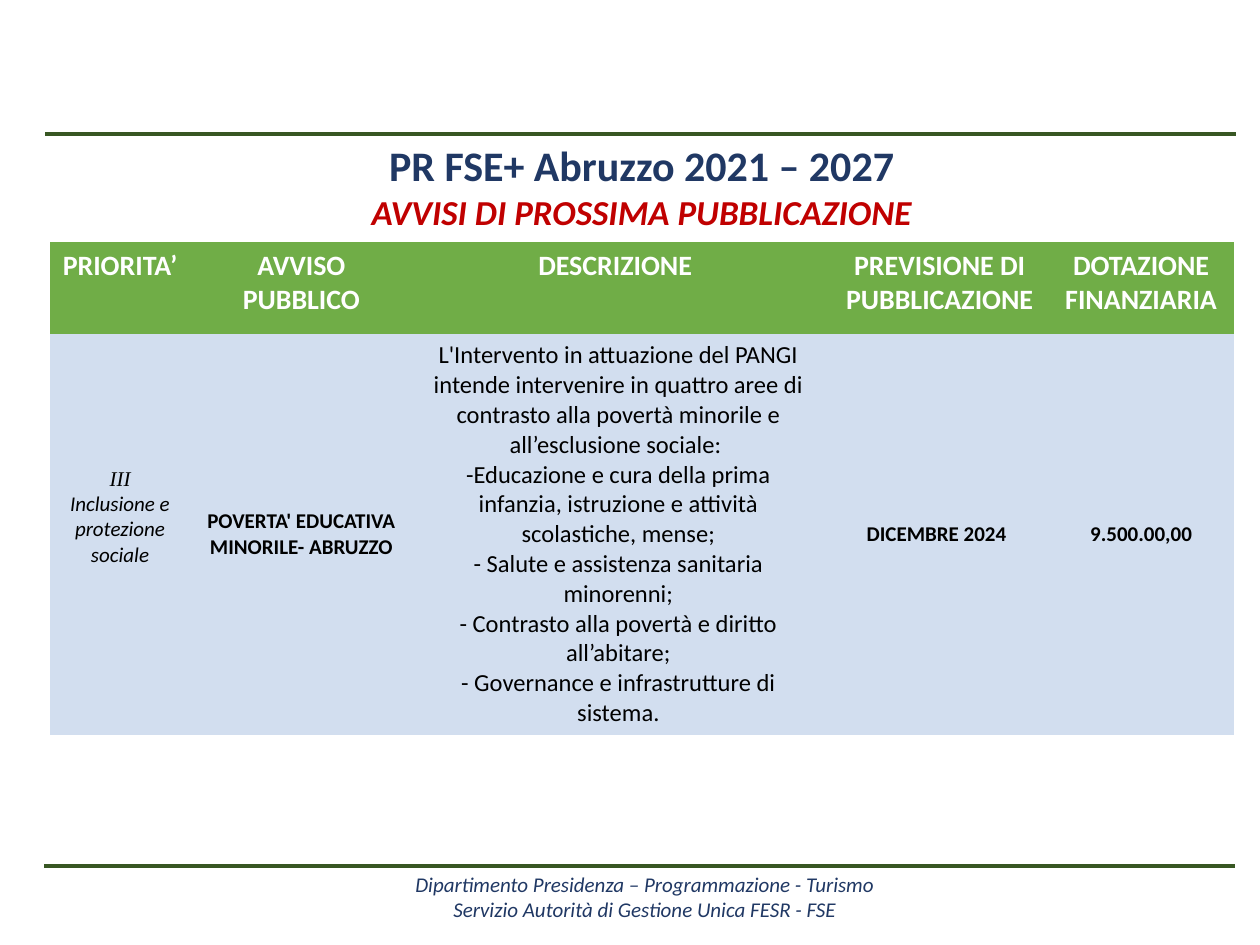
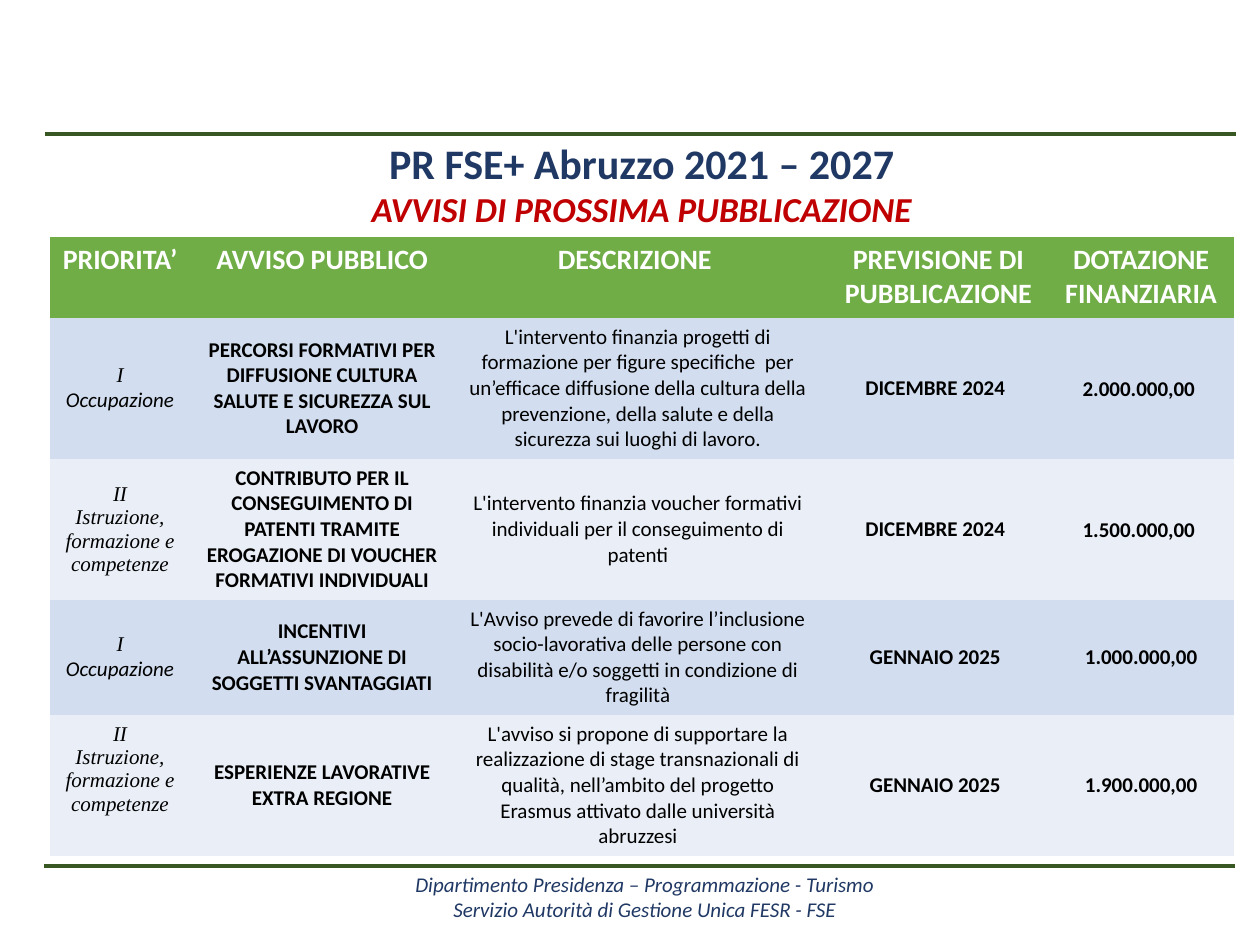
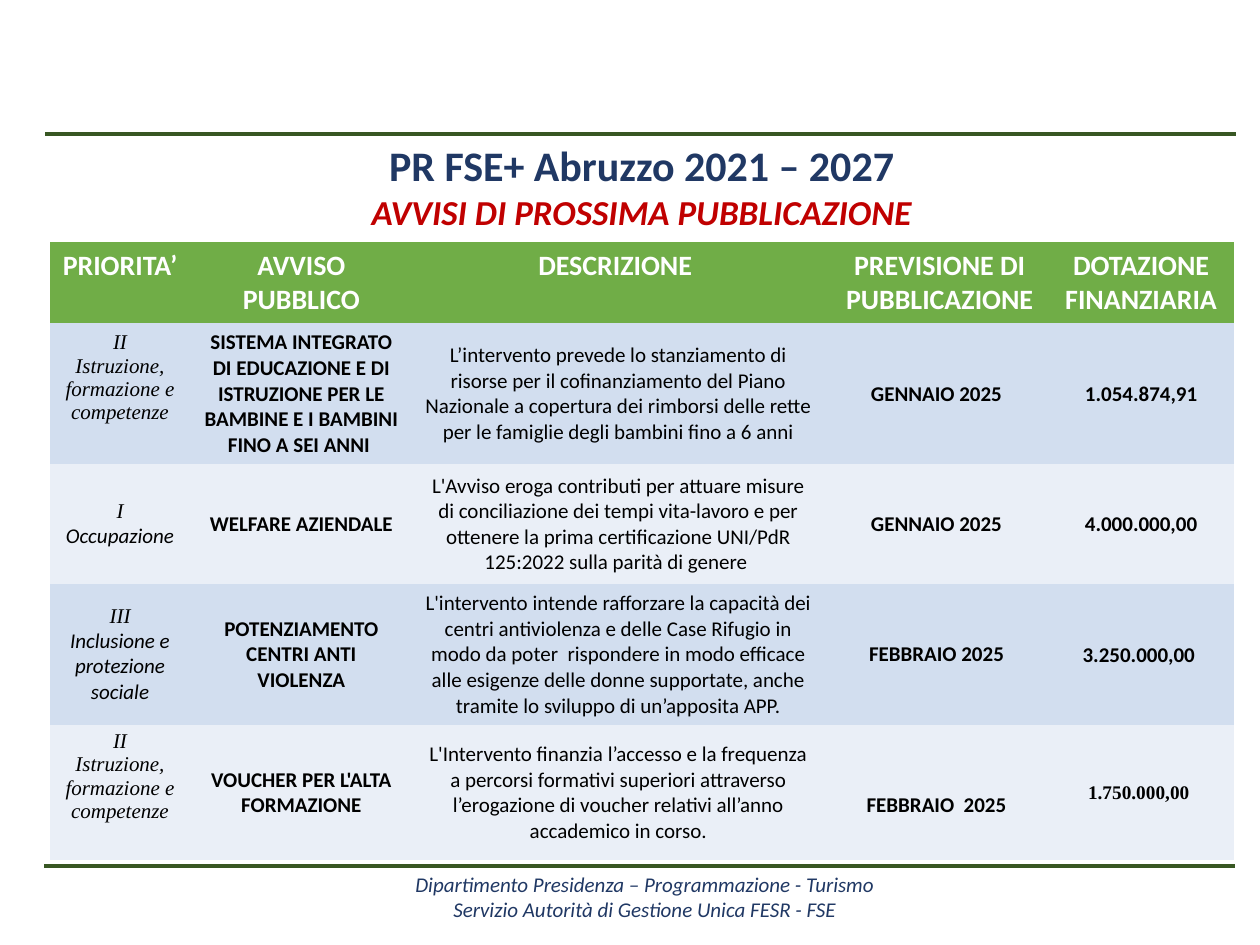
import dataclasses

import pptx
import pptx.dml.color
import pptx.enum.shapes
import pptx.enum.text
import pptx.oxml.ns
import pptx.util
from lxml import etree

Cm = pptx.util.Cm
Pt = pptx.util.Pt
ALIGN = pptx.enum.text.PP_ALIGN
ANCHOR = pptx.enum.text.MSO_ANCHOR


@dataclasses.dataclass(frozen=True)
class Theme:
    font: str = "Calibri"
    serif: str = "Times New Roman"
    rule: str = "385723"
    navy: str = "203864"
    red: str = "C00000"
    header: str = "70AD47"
    bands: tuple = ("D2DEEF", "EAEFF7")
    white: str = "FFFFFF"
    black: str = "000000"
    title: int = 24
    subtitle: int = 20
    heading: int = 16
    large: int = 14
    body: int = 12
    small: int = 11
    rule_width: float = 2.25


THEME = Theme()

# Content shared by all slides
TITLE = "PR FSE+ Abruzzo 2021 – 2027"
SUBTITLE = "AVVISI DI PROSSIMA PUBBLICAZIONE"
FOOTER = [
    "Dipartimento Presidenza – Programmazione - Turismo",
    "Servizio Autorità di Gestione Unica FESR - FSE",
]
HEADINGS = [
    ["PRIORITA’"],
    ["AVVISO PUBBLICO"],
    ["DESCRIZIONE "],
    [" PREVISIONE DI", " PUBBLICAZIONE"],
    ["DOTAZIONE FINANZIARIA"],
]
PRIORITIES = {
    "I": ("Occupazione", THEME.font),
    "II": ("Istruzione, formazione e competenze", THEME.serif),
    "III": ("Inclusione e protezione sociale", THEME.font),
}

# Cell formats that depart from the column's own
PRIORITY, NOTICE, DESCRIPTION, DATE, AMOUNT = range(5)
RAISED = {PRIORITY: {"margins": (0.25, 0, 0.25, 0.65)}}
TIGHT = {AMOUNT: {"margins": (0.03, 0.03, 0.03, 0)}}

# Each notice: priority, name, description paragraphs, date, amount, cell formats
SLIDES = [
    {
        "title_top": 2.69, "table_top": 4.88,
        "columns": [2.84, 4.47, 8.31, 4.52, 3.73],
        "rows": [1.85, 8.08],
        "notices": [
            ("III", "POVERTA' EDUCATIVA MINORILE- ABRUZZO", [
                "L'Intervento in attuazione del PANGI intende intervenire in quattro aree "
                "di contrasto alla povertà minorile e all’esclusione sociale: ",
                "-Educazione e cura della prima infanzia, istruzione e attività "
                "scolastiche, mense;",
                "- Salute e assistenza sanitaria minorenni;",
                "- Contrasto alla povertà e diritto all’abitare;",
                "- Governance e infrastrutture di sistema.",
            ], "DICEMBRE 2024", "9.500.00,00",
             RAISED | {DESCRIPTION: {"size": THEME.large}}),
        ],
    },
    {
        "title_top": 2.64, "table_top": 4.77,
        "columns": [2.84, 5.31, 7.42, 4.57, 3.73],
        "rows": [1.64, 2.84, 2.84, 2.32, 2.84],
        "notices": [
            ("I", "PERCORSI FORMATIVI PER DIFFUSIONE CULTURA SALUTE E SICUREZZA SUL LAVORO", [
                "L'intervento finanzia progetti di formazione per figure specifiche  per "
                "un’efficace diffusione della cultura della prevenzione, della salute e "
                "della sicurezza sui luoghi di lavoro.",
            ], "DICEMBRE 2024", "2.000.000,00 ", TIGHT),
            ("II", "CONTRIBUTO PER IL CONSEGUIMENTO DI PATENTI TRAMITE EROGAZIONE DI "
                   "VOUCHER FORMATIVI INDIVIDUALI", [
                "L'intervento finanzia voucher formativi individuali per il "
                "conseguimento di patenti",
            ], "DICEMBRE 2024", "1.500.000,00 ", TIGHT),
            ("I", "INCENTIVI ALL’ASSUNZIONE DI SOGGETTI SVANTAGGIATI", [
                "L'Avviso prevede di favorire l’inclusione socio-lavorativa delle persone "
                "con disabilità e/o soggetti in condizione di fragilità",
            ], "GENNAIO 2025", " 1.000.000,00 ", {}),
            ("II", "ESPERIENZE LAVORATIVE EXTRA REGIONE", [
                "L'avviso si propone di supportare la realizzazione di stage "
                "transnazionali di qualità, nell’ambito del progetto Erasmus attivato "
                "dalle università abruzzesi",
            ], "GENNAIO 2025", " 1.900.000,00 ", RAISED),
        ],
    },
    {
        "title_top": 2.69, "table_top": 4.88,
        "columns": [2.84, 4.47, 8.31, 4.52, 3.73],
        "rows": [1.64, 2.84, 2.42, 2.84, 2.72],
        "notices": [
            ("II", "SISTEMA INTEGRATO DI EDUCAZIONE E DI ISTRUZIONE PER LE BAMBINE E I "
                   "BAMBINI FINO A SEI ANNI ", [
                "L’intervento prevede lo stanziamento di risorse per il cofinanziamento "
                "del Piano Nazionale a copertura dei rimborsi delle rette per le famiglie "
                "degli bambini fino a 6 anni",
            ], "GENNAIO 2025", "1.054.874,91", RAISED),
            ("I", "WELFARE AZIENDALE", [
                "L'Avviso eroga contributi per attuare misure di conciliazione dei tempi "
                "vita-lavoro e per ottenere la prima certificazione UNI/PdR 125:2022 "
                "sulla parità di genere ",
            ], "GENNAIO 2025", " 4.000.000,00 ", {}),
            ("III", "POTENZIAMENTO CENTRI ANTI VIOLENZA", [
                "L'intervento intende rafforzare la capacità dei centri antiviolenza e "
                "delle Case Rifugio in modo da poter  rispondere in modo efficace alle "
                "esigenze delle donne supportate, anche tramite lo sviluppo di "
                "un’apposita APP.",
            ], "FEBBRAIO 2025", "3.250.000,00 ", TIGHT),
            ("II", "VOUCHER PER L'ALTA FORMAZIONE", [
                "L'Intervento finanzia l’accesso e la frequenza a percorsi formativi "
                "superiori attraverso l’erogazione di voucher relativi all’anno "
                "accademico in corso.",
            ], "FEBBRAIO  2025", "1.750.000,00 ", RAISED | {
                DATE: {"margins": (0.25, 0.65, 0.25, 0.13)},
                AMOUNT: TIGHT[AMOUNT] | {"size": THEME.small, "font": THEME.serif},
            }),
        ],
    },
]

# Page layout in centimetres
LEFT = 1
WIDTH = 23.88
RULES = [(0.91, 2.7), (0.89, 17.45)]
RULE_LENGTH = 24
FOOTER_TOP = 17.56
NO_GRID_STYLE = "{2D5ABB26-0587-4C30-8999-92F81FD0307C}"


def rgb(value):
    return pptx.dml.color.RGBColor.from_string(value)


def write(frame, text, first=True, size=THEME.body, font=THEME.font,
          color=THEME.black, bold=False, italic=False):
    """Add one centred paragraph to a text frame."""
    paragraph = frame.paragraphs[0] if first else frame.add_paragraph()
    paragraph.alignment = ALIGN.CENTER
    run = paragraph.add_run()
    run.text = text
    run.font.size = Pt(size)
    run.font.name = font
    run.font.color.rgb = rgb(color)
    run.font.bold = bold
    run.font.italic = italic


def add_frame(slide, top, height, width=WIDTH):
    frame = slide.shapes.add_textbox(Cm(LEFT), Cm(top), Cm(width), Cm(height)).text_frame
    frame.word_wrap = True
    return frame


def fill_cell(cell, paragraphs, fill, anchor=ANCHOR.MIDDLE,
              margins=(0.25, 0.13, 0.25, 0.13), **text_format):
    """Paragraphs are (text, format) pairs; text_format applies to all of them."""
    cell.fill.solid()
    cell.fill.fore_color.rgb = rgb(fill)
    cell.vertical_anchor = anchor
    (cell.margin_left, cell.margin_top,
     cell.margin_right, cell.margin_bottom) = map(Cm, margins)
    for index, (text, own_format) in enumerate(paragraphs):
        write(cell.text_frame, text, first=index == 0, **(own_format | text_format))


def add_rules_and_footer(slide):
    for left, top in RULES:
        rule = slide.shapes.add_connector(
            pptx.enum.shapes.MSO_CONNECTOR.STRAIGHT,
            Cm(left), Cm(top), Cm(left + RULE_LENGTH), Cm(top))
        rule.line.color.rgb = rgb(THEME.rule)
        rule.line.width = Pt(THEME.rule_width)
        etree.SubElement(rule._element.spPr, pptx.oxml.ns.qn("a:effectLst"))
    footer = add_frame(slide, FOOTER_TOP, 1.45, width=RULE_LENGTH)
    footer.margin_top = footer.margin_bottom = 0
    for index, line in enumerate(FOOTER):
        write(footer, line, first=index == 0, color=THEME.navy, italic=True)


def add_title(slide, top):
    title = add_frame(slide, top, 3.18)
    write(title, TITLE, size=THEME.title, color=THEME.navy, bold=True)
    write(title, SUBTITLE, first=False, size=THEME.subtitle, color=THEME.red,
          bold=True, italic=True)


def notice_cells(notice):
    priority, name, description, date, amount, _ = notice
    area, area_font = PRIORITIES[priority]
    return [
        [(priority, {"font": THEME.serif, "italic": True}),
         (area, {"font": area_font, "italic": True})],
        [(name, {"bold": True})],
        [(line, {}) for line in description],
        [(date, {"bold": True})],
        [(amount, {"bold": True})],
    ]


def add_notices(slide, content):
    columns, rows = content["columns"], content["rows"]
    table = slide.shapes.add_table(
        len(rows), len(columns), Cm(LEFT), Cm(content["table_top"]),
        Cm(sum(columns)), Cm(sum(rows))).table
    table._tbl.tblPr.find(pptx.oxml.ns.qn("a:tableStyleId")).text = NO_GRID_STYLE
    for column, width in zip(table.columns, columns):
        column.width = Cm(width)
    for row, height in zip(table.rows, rows):
        row.height = Cm(height)

    # Heading row
    for column, lines in enumerate(HEADINGS):
        fill_cell(table.cell(0, column), [(line, {}) for line in lines], THEME.header,
                  anchor=ANCHOR.TOP, size=THEME.heading, color=THEME.white, bold=True)

    # Banded notice rows
    for row, notice in enumerate(content["notices"], start=1):
        band = THEME.bands[(row - 1) % 2]
        for column, paragraphs in enumerate(notice_cells(notice)):
            fill_cell(table.cell(row, column), paragraphs, band,
                      **notice[-1].get(column, {}))


def main():
    deck = pptx.Presentation()
    deck.slide_width, deck.slide_height = Cm(25.4), Cm(19.05)
    for content in SLIDES:
        slide = deck.slides.add_slide(deck.slide_layouts[6])
        add_rules_and_footer(slide)
        add_notices(slide, content)
        add_title(slide, content["title_top"])
    deck.save("out.pptx")


if __name__ == "__main__":
    main()
